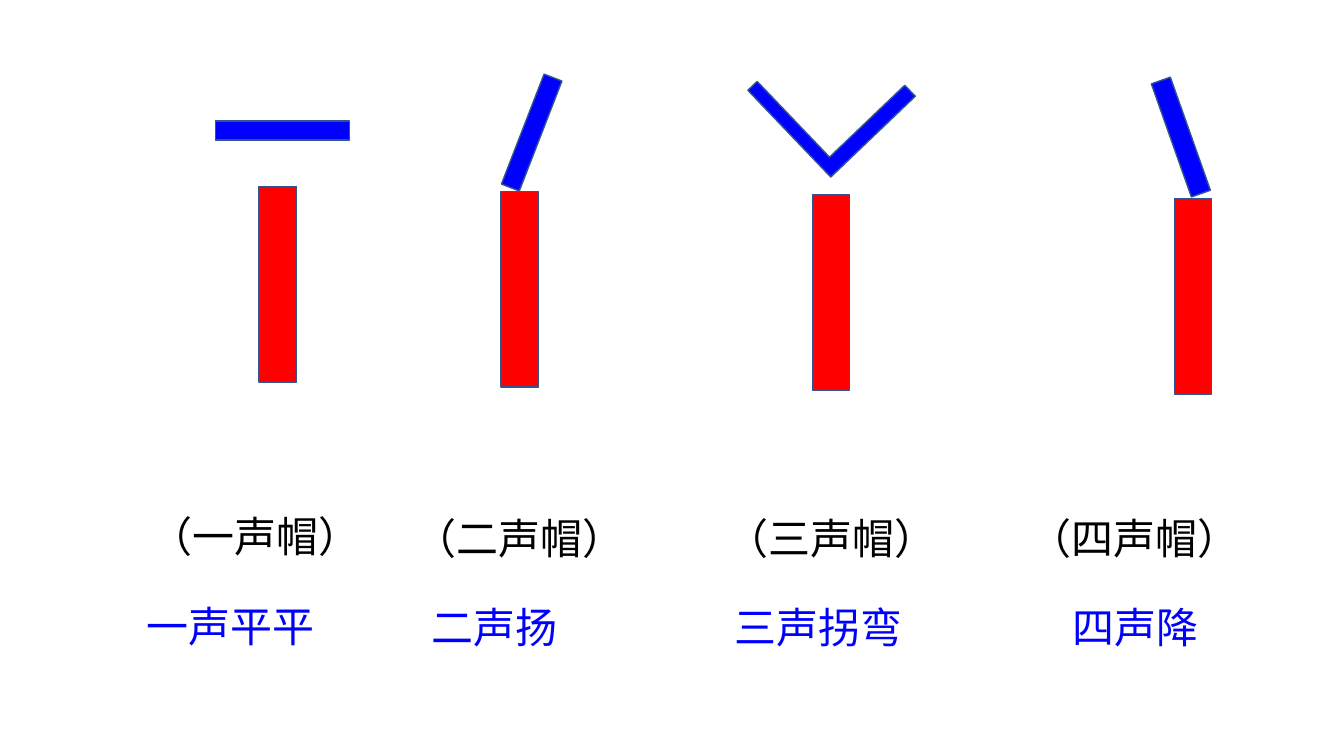
from dataclasses import dataclass
from lxml.etree import SubElement
from pptx import Presentation
from pptx.dml.color import RGBColor
from pptx.enum.shapes import MSO_SHAPE
from pptx.enum.text import MSO_AUTO_SIZE
from pptx.oxml.ns import qn
from pptx.slide import Slide
from pptx.util import Pt

RED = RGBColor(0xFF, 0x00, 0x00)
BLUE = RGBColor(0x00, 0x00, 0xFF)
BLACK = RGBColor(0x00, 0x00, 0x00)
OUTLINE = RGBColor(0x32, 0x54, 0x91)
FONT = "Noto Sans CJK SC"
FONT_SIZE = 30
STEM_SIZE = (26.64, 139.68)
TEXT_HEIGHT = 43.92
TEXT_INSETS = 15.2


@dataclass
class Bar:
    left: float
    top: float
    width: float
    height: float
    color: RGBColor
    rotation: float = 0
    shape: MSO_SHAPE = MSO_SHAPE.RECTANGLE
    adjustments: tuple[float, ...] = ()


@dataclass
class Label:
    text: str
    left: float
    top: float
    color: RGBColor


@dataclass
class Tone:
    stem: Bar
    hat: Bar
    name: Label
    rhyme: Label
    grouped: bool = False


def stem(left: float, top: float) -> Bar:
    return Bar(left, top, *STEM_SIZE, RED)


TONES = [
    Tone(stem(185.04, 133.2), Bar(154.08, 86.4, 95.76, 13.68, BLUE),
         Label("（一声帽）", 100.8, 361.44, BLACK),
         Label("一声平平", 97.92, 425.52, BLUE), grouped=True),
    Tone(stem(357.84, 136.8), Bar(337.68, 87.84, 84.24, 13.68, BLUE, 291.2),
         Label("（二声帽）", 288.72, 362.88, BLACK),
         Label("二声扬", 300.96, 426.24, BLUE)),
    Tone(stem(580.32, 138.96),
         Bar(552.24, 23.76, 83.52, 85.68, BLUE, 316.3,
             MSO_SHAPE.CORNER, (0.13, 0.11)),
         Label("（三声帽）", 511.92, 362.88, BLACK),
         Label("三声拐弯", 517.68, 426.24, BLUE), grouped=True),
    Tone(stem(838.8, 141.84), Bar(800.64, 90.72, 85.68, 14.4, BLUE, 70.5),
         Label("（四声帽）", 728.64, 362.88, BLACK),
         Label("四声降", 758.88, 426.24, BLUE)),
]


def draw_bar(shapes, bar: Bar) -> None:
    sp = shapes.add_shape(bar.shape, Pt(bar.left), Pt(bar.top),
                          Pt(bar.width), Pt(bar.height))
    for i, value in enumerate(bar.adjustments):
        sp.adjustments[i] = value
    sp.rotation = bar.rotation
    sp.shadow.inherit = False
    sp.fill.solid()
    sp.fill.fore_color.rgb = bar.color
    sp.line.color.rgb = OUTLINE
    sp.line.width = Pt(1)


def draw_label(s: Slide, label: Label) -> None:
    width = FONT_SIZE * len(label.text) + TEXT_INSETS
    tf = s.shapes.add_textbox(Pt(label.left), Pt(label.top),
                              Pt(width), Pt(TEXT_HEIGHT)).text_frame
    tf.word_wrap = False
    tf.auto_size = MSO_AUTO_SIZE.SHAPE_TO_FIT_TEXT
    p = tf.paragraphs[0]
    p.text = label.text
    p.font.size = Pt(FONT_SIZE)
    p.font.color.rgb = label.color
    p.font.name = FONT
    # East Asian typeface for the Chinese characters
    SubElement(p._p.pPr.find(qn("a:defRPr")), qn("a:ea"), typeface=FONT)


def draw_tone(s: Slide, tone: Tone) -> None:
    shapes = s.shapes.add_group_shape().shapes if tone.grouped else s.shapes
    for bar in (tone.hat, tone.stem):
        draw_bar(shapes, bar)
    for label in (tone.name, tone.rhyme):
        draw_label(s, label)


def main() -> None:
    prs = Presentation()
    prs.slide_width, prs.slide_height = Pt(960), Pt(540)
    s = prs.slides.add_slide(prs.slide_layouts[6])
    for tone in TONES:
        draw_tone(s, tone)
    prs.save("out.pptx")


if __name__ == "__main__":
    main()
